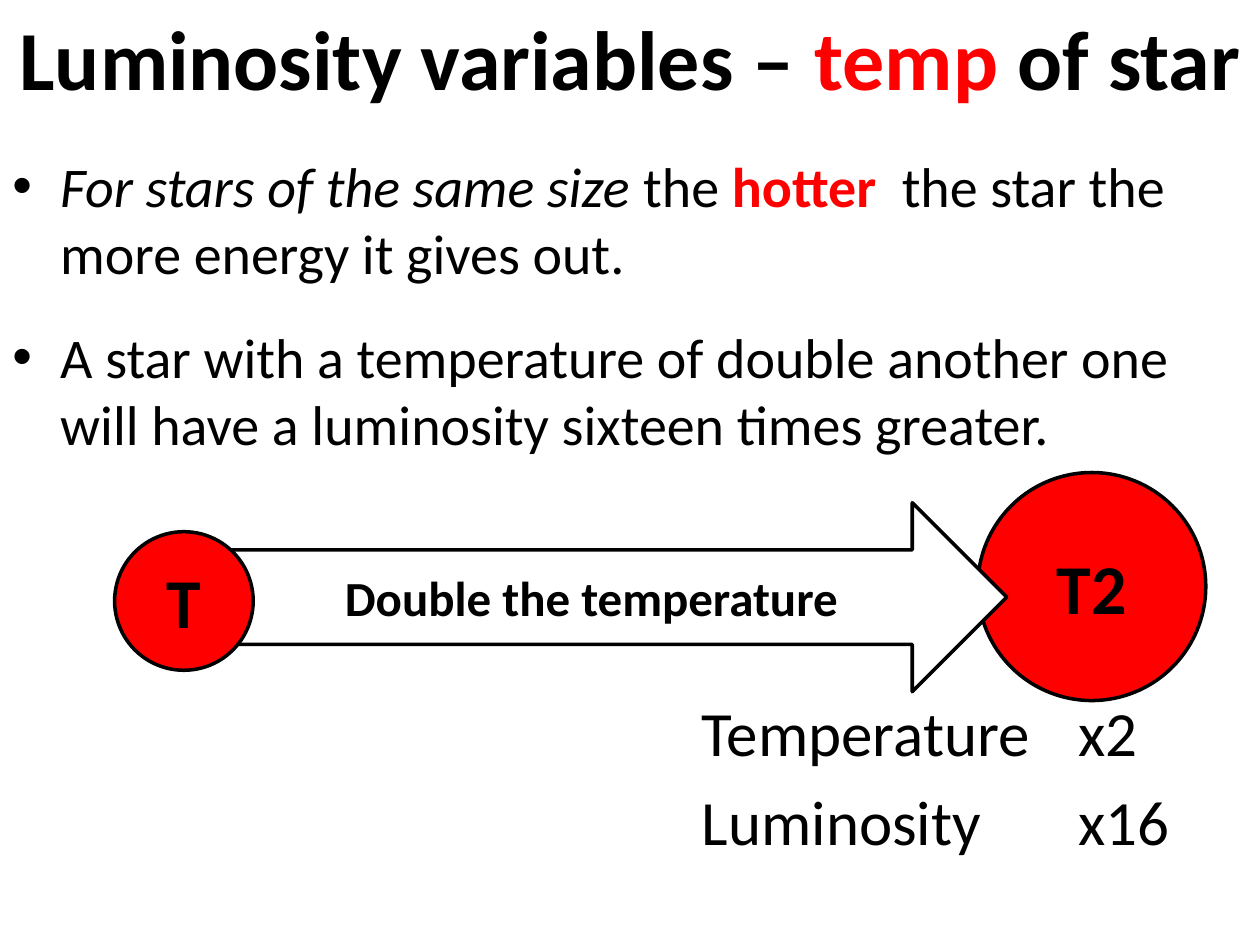
import pptx
import pptx.util
import pptx.dml.color
import pptx.enum.shapes
import pptx.enum.text
import pptx.oxml.ns
import lxml.etree

Pt = pptx.util.Pt
RGB = pptx.dml.color.RGBColor
Kind = pptx.enum.shapes.MSO_SHAPE
Align = pptx.enum.text.PP_ALIGN
Anchor = pptx.enum.text.MSO_ANCHOR

BLACK = RGB(0, 0, 0)
RED = RGB(255, 0, 0)
WHITE = RGB(255, 255, 255)
FONT = "Calibri"
UNIT = pptx.util.Inches(0.1)  # grid of 100 columns by 75 rows
COLS, ROWS = 100, 75


def span(*cells):
    """Turn grid columns and rows into lengths."""
    return [round(cell * UNIT) for cell in cells]


def add_run(para, text, size, color=BLACK, bold=False, italic=False):
    run = para.add_run()
    run.text = text
    font = run.font
    font.name, font.size = FONT, Pt(size)
    font.bold, font.italic = bold, italic
    font.color.rgb = color


def add_box(slide, box):
    frame = slide.shapes.add_textbox(*span(*box)).text_frame
    frame.word_wrap = True
    frame.vertical_anchor = Anchor.TOP
    return frame


def add_bullet(para, indent):
    props = para._p.get_or_add_pPr()
    props.set("marL", str(indent))
    props.set("indent", str(-indent))
    for tag, key, value in (("a:buFont", "typeface", "Arial"),
                            ("a:buChar", "char", "•")):
        item = lxml.etree.SubElement(props, pptx.oxml.ns.qn(tag))
        item.set(key, value)


def add_title(slide, box):
    para = add_box(slide, box).paragraphs[0]
    para.alignment = Align.CENTER
    add_run(para, "Luminosity variables – ", 48, bold=True)
    add_run(para, "temp", 48, RED, bold=True)
    add_run(para, " of star", 48, bold=True)


def add_points(slide, box):
    frame = add_box(slide, box)
    first, second = frame.paragraphs[0], frame.add_paragraph()
    second.space_before = Pt(21)
    for para in (first, second):
        add_bullet(para, span(3.8)[0])
    add_run(first, "For stars of the same size", 32, italic=True)
    add_run(first, " the ", 32)
    add_run(first, "hotter", 32, RED, bold=True)
    add_run(first, "  the star the more energy it gives out.", 32)
    add_run(second, "A star with a temperature of double another one "
            "will have a luminosity sixteen times greater.", 32)


def add_part(slide, kind, box, fill, label, size):
    part = slide.shapes.add_shape(kind, *span(*box))
    part.shadow.inherit = False
    part.fill.solid()
    part.fill.fore_color.rgb = fill
    part.line.color.rgb = BLACK
    part.line.width = Pt(2)
    frame = part.text_frame
    frame.vertical_anchor = Anchor.MIDDLE
    para = frame.paragraphs[0]
    para.alignment = Align.CENTER
    add_run(para, label, size, bold=True)


def add_stars(slide, box):
    left, top, wide, high = box
    small = 11
    # Hot star at the right, as tall as the box
    add_part(slide, Kind.OVAL, (left + wide - high, top, high, high),
             RED, "T2", 40)
    # Arrow between the stars, then the cool star over its tail
    add_part(slide, Kind.RIGHT_ARROW, (left + 8.6, top + 2.4, 62.2, 15),
             WHITE, "Double the temperature", 28)
    add_part(slide, Kind.OVAL, (left, top + 4.7, small, small), RED, "T", 40)


def add_facts(slide, box):
    facts = (("Temperature", "x2"), ("Luminosity", "x16"))
    table = slide.shapes.add_table(len(facts), 2, *span(*box)).table
    table.first_row = table.horz_banding = False
    for col, share in zip(table.columns, (0.66, 0.34)):
        col.width = span(box[2] * share)[0]
    for r, fact in enumerate(facts):
        table.rows[r].height = span(box[3] / len(facts))[0]
        for c, text in enumerate(fact):
            cell = table.cell(r, c)
            cell.fill.background()
            add_run(cell.text_frame.paragraphs[0], text, 36)
            # No cell borders
            props = cell._tc.get_or_add_tcPr()
            for i, side in enumerate(("a:lnL", "a:lnR", "a:lnT", "a:lnB")):
                edge = lxml.etree.Element(pptx.oxml.ns.qn(side))
                lxml.etree.SubElement(edge, pptx.oxml.ns.qn("a:noFill"))
                props.insert(i, edge)


def main():
    deck = pptx.Presentation()
    deck.slide_width, deck.slide_height = span(COLS, ROWS)
    slide = deck.slides.add_slide(deck.slide_layouts[6])
    add_points(slide, (0, 11.5, COLS, ROWS - 11.5))
    add_stars(slide, (9.1, 37.5, 86.6, 18.1))
    add_facts(slide, (54.7, 54.8, 45.3, 14))
    add_title(slide, (0, 0, COLS, 12.5))
    deck.save("out.pptx")


if __name__ == "__main__":
    main()
